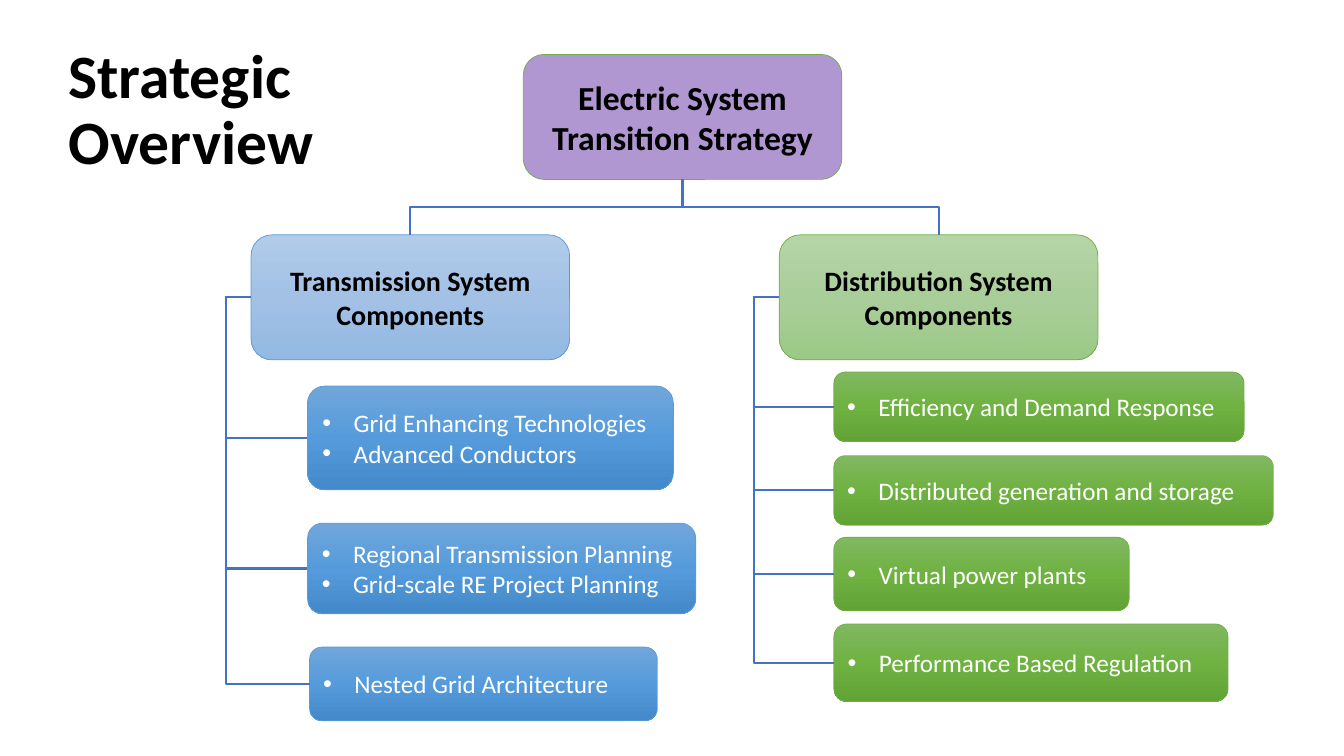
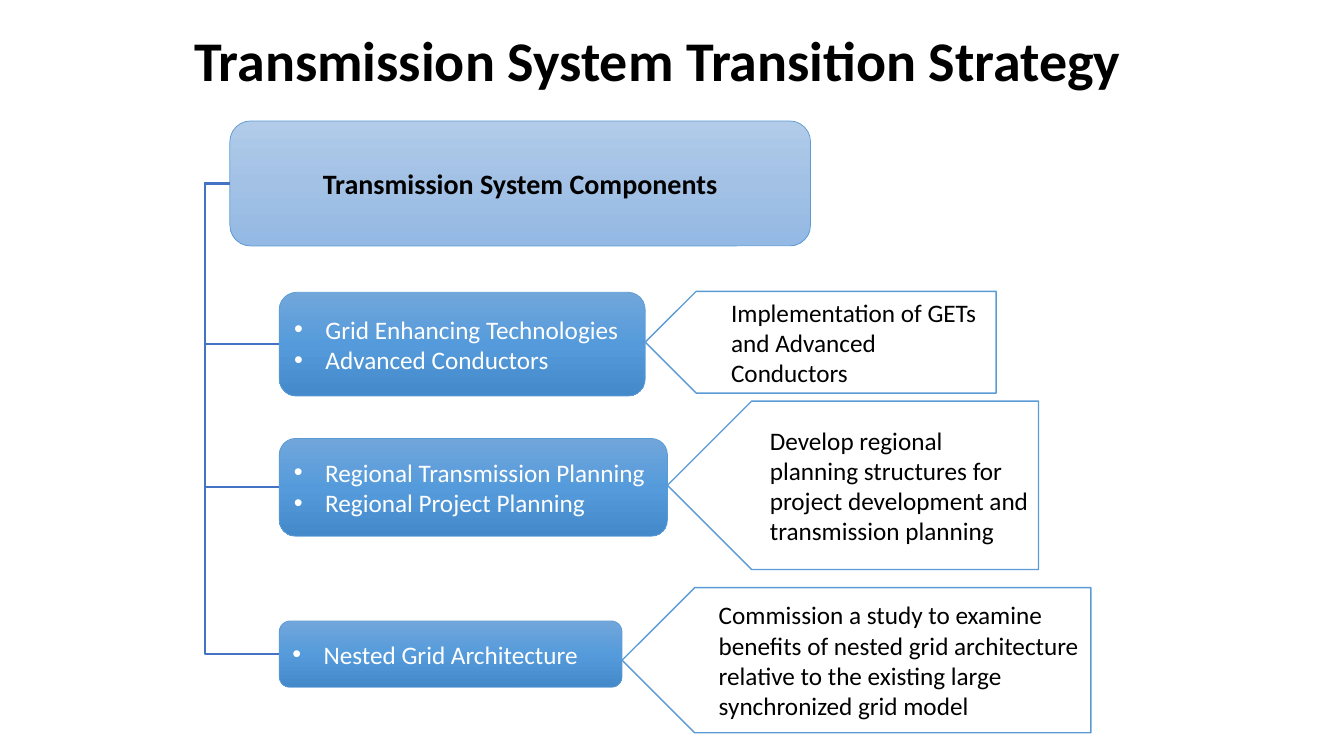
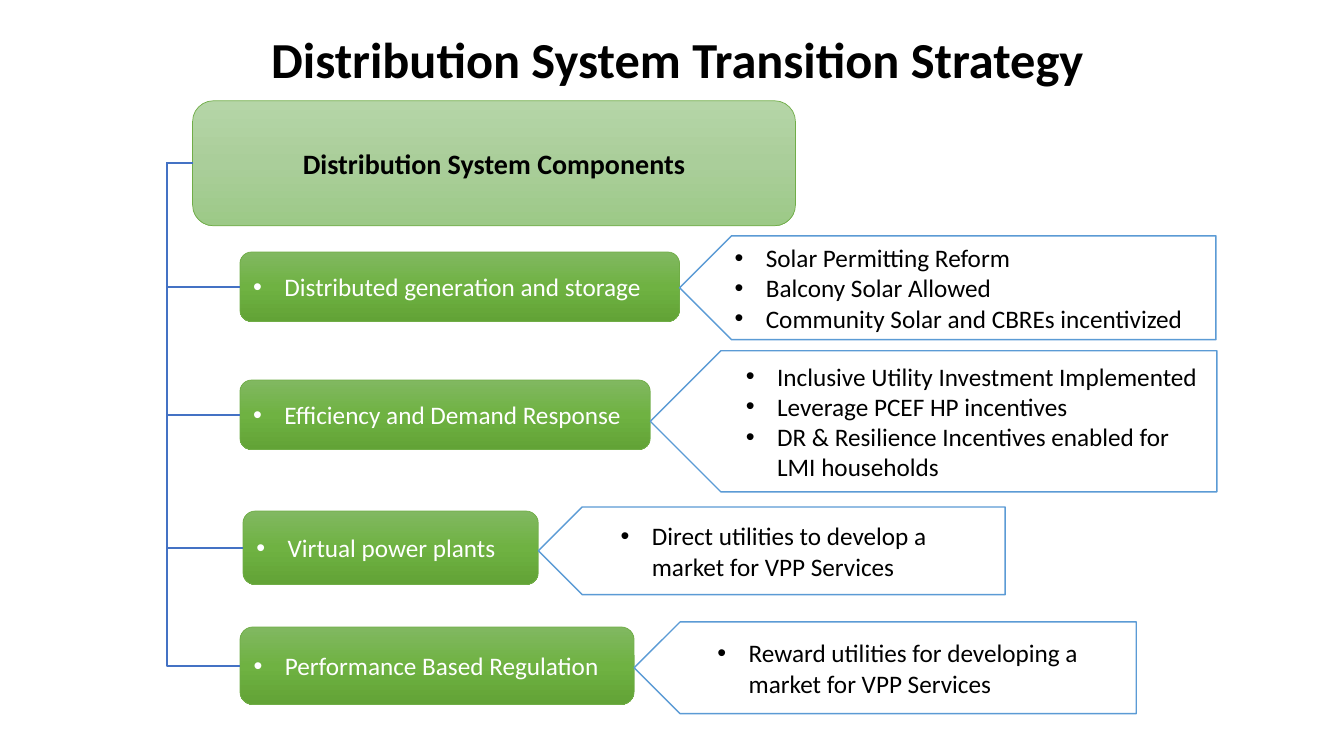
from copy import deepcopy

from lxml import etree
from pptx import Presentation
from pptx.dml.color import RGBColor
from pptx.enum import shapes, text
from pptx.oxml.ns import qn
from pptx.util import Inches, Pt

FONT = "Calibri"
BLACK = RGBColor(0, 0, 0)
WHITE = RGBColor(255, 255, 255)
LILAC = RGBColor(0xB1, 0x97, 0xD2)
BLUE = RGBColor(0x5B, 0x9B, 0xD5)
GREEN = RGBColor(0x70, 0xAD, 0x47)
WIRE = RGBColor(0x44, 0x72, 0xC4)


def shades(*codes):
    return [RGBColor.from_string(code) for code in codes]


# Each theme: outline, gradient of the heading, gradient of the items
SKY = (BLUE, shades("B1CBE9", "A3C1E5", "93B9E4"),
       shades("71A6DB", "559BDB", "448ACA"))
LEAF = (GREEN, shades("B5D5A7", "AACE9A", "9CC987"),
        shades("81B861", "6FB242", "62A336"))

GRID = ["Grid Enhancing Technologies", "Advanced Conductors"]
NEST = ["Nested Grid Architecture"]
REGION = "Regional Transmission Planning"

# Text, width and height of the distribution items
SAVE = (["Efficiency and Demand Response"], 4.07, 0.69)
STORE = (["Distributed generation and storage"], 4.36, 0.69)
PLANT = (["Virtual power plants"], 2.93, 0.73)
RULE = (["Performance Based Regulation"], 3.91, 0.77)


def style(run, size, color, bold=False):
    run.font.name = FONT
    run.font.size = Pt(size)
    run.font.color.rgb = color
    run.font.bold = bold


def indent(para, left, bullet):
    props = para._p.get_or_add_pPr()
    props.set("marL", str(Inches(left)))
    props.set("indent", str(Inches(-0.31 if bullet else 0)))
    if bullet:
        etree.SubElement(props, qn("a:buFont")).set("typeface", "Arial")
        etree.SubElement(props, qn("a:buChar")).set("char", "•")


def write(shape, lines, size, color, left=None, bullet=False, bold=False):
    """Fill a shape with centred lines, or with indented ones if left is set."""
    frame = shape.text_frame
    frame.word_wrap = True
    frame.vertical_anchor = text.MSO_ANCHOR.MIDDLE
    for num, line in enumerate(lines):
        para = frame.add_paragraph() if num else frame.paragraphs[0]
        if left is None:
            para.alignment = text.PP_ALIGN.CENTER
        else:
            indent(para, left, bullet)
            para.alignment = text.PP_ALIGN.LEFT
        run = para.add_run()
        run.text = line
        style(run, size, color, bold)


def blend(shape, colors):
    """Fill a shape with a three-stop gradient running downwards."""
    shape.fill.gradient()
    shape.fill.gradient_angle = 270
    stops = shape._element.spPr.find(qn("a:gradFill")).find(qn("a:gsLst"))
    stops.append(deepcopy(stops[-1]))
    for num, stop in enumerate(shape.fill.gradient_stops):
        stop.position = num / 2
        stop.color.rgb = colors[num]


def outline(slide, kind, left, top, width, height, color, weight):
    shape = slide.shapes.add_shape(kind, left, top, width, height)
    shape.shadow.inherit = False
    shape.line.color.rgb = color
    shape.line.width = Pt(weight)
    return shape


def card(slide, left, top, width, height, color):
    return outline(slide, shapes.MSO_SHAPE.ROUNDED_RECTANGLE, Inches(left),
                   Inches(top), Inches(width), Inches(height), color, 0.5)


def head(slide, theme, line, left, top, width):
    shape = card(slide, left, top, width, 1.24, theme[0])
    blend(shape, theme[1])
    write(shape, [line], 20, BLACK, bold=True)
    return shape


def item(slide, theme, parent, lines, width, height, left, top):
    """Draw a bulleted card and tie it to its heading."""
    shape = card(slide, left, top, width, height, theme[0])
    blend(shape, theme[2])
    write(shape, lines, 18, WHITE, left=0.31, bullet=True)
    hook(slide, parent, shape)
    return shape


def plate(slide, source, lines, top, width, height, left=0.81, bullet=True):
    """Draw a note whose tip touches the right side of its source."""
    shape = outline(slide, shapes.MSO_SHAPE.PENTAGON,
                    source.left + source.width, Inches(top),
                    Inches(width), Inches(height), BLUE, 1)
    shape._element.spPr.find(qn("a:xfrm")).set("flipH", "1")
    shape.fill.solid()
    shape.fill.fore_color.rgb = WHITE
    write(shape, lines, 18, BLACK, left=left, bullet=bullet)


def bend(slide, start, end, sites):
    """Join two shapes at their numbered sites (0 top, 1 left, 2 bottom)."""
    wire = slide.shapes.add_connector(shapes.MSO_CONNECTOR.ELBOW, 0, 0, 0, 0)
    wire.begin_connect(start, sites[0])
    wire.end_connect(end, sites[1])
    wire.line.color.rgb = WIRE
    wire.line.width = Pt(1.5)
    etree.SubElement(wire._element.spPr, qn("a:effectLst"))
    return wire


def hook(slide, parent, child):
    """Tie left sides, with the bend a quarter inch outside the parent."""
    wire = bend(slide, parent, child, (1, 1))
    ratio = round(-Inches(0.25) / wire.width * 100000)
    geom = wire._element.spPr.find(qn("a:prstGeom"))
    guide = etree.SubElement(geom.find(qn("a:avLst")), qn("a:gd"))
    guide.set("name", "adj1")
    guide.set("fmla", f"val {ratio}")


def drop(slide, parent, child):
    """Tie a bottom to a top; the elbow is turned to leave downwards."""
    wire = bend(slide, parent, child, (2, 0))
    right = wire.end_x > wire.begin_x
    mid_x = wire.left + wire.width // 2
    mid_y = wire.top + wire.height // 2
    wide, tall = wire.height, wire.width
    wire.left, wire.top = mid_x - wide // 2, mid_y - tall // 2
    wire.width, wire.height = wide, tall
    frame = wire._element.spPr.find(qn("a:xfrm"))
    frame.set("rot", str((270 if right else 90) * 60000))
    frame.set("flipH", "1" if right else "0")
    frame.set("flipV", "0")


def page(deck, title, size, left, top, width, height,
         align=text.PP_ALIGN.CENTER):
    slide = deck.slides.add_slide(deck.slide_layouts[5])
    shape = slide.shapes.title
    shape.left, shape.top = Inches(left), Inches(top)
    shape.width, shape.height = Inches(width), Inches(height)
    frame = shape.text_frame
    frame.word_wrap = True
    frame.auto_size = text.MSO_AUTO_SIZE.NONE
    frame.vertical_anchor = text.MSO_ANCHOR.MIDDLE
    para = frame.paragraphs[0]
    para.alignment = align
    para.line_spacing = 0.9
    run = para.add_run()
    run.text = title
    style(run, size, BLACK, bold=True)
    return slide


def survey(deck):
    slide = page(deck, "Strategic Overview", 44, 0.58, 0.2, 3.03, 1.81,
                 text.PP_ALIGN.LEFT)
    root = card(slide, 5.19, 0.54, 3.16, 1.24, GREEN)
    root.fill.solid()
    root.fill.fore_color.rgb = LILAC
    write(root, ["Electric System Transition Strategy"], 24, BLACK, bold=True)

    trans = head(slide, SKY, "Transmission System Components",
                 2.49, 2.33, 3.16)
    dist = head(slide, LEAF, "Distribution System Components",
                7.73, 2.33, 3.16)
    for child in (trans, dist):
        drop(slide, root, child)

    plans = [REGION, "Grid-scale RE Project Planning"]
    item(slide, SKY, trans, GRID, 3.63, 1.03, 3.05, 3.83)
    item(slide, SKY, trans, plans, 3.85, 0.9, 3.05, 5.19)
    item(slide, SKY, trans, NEST, 3.45, 0.73, 3.07, 6.42)
    for part, top in ((SAVE, 3.69), (STORE, 4.52), (PLANT, 5.33),
                      (RULE, 6.19)):
        item(slide, LEAF, dist, *part, 8.27, top)


def trunk(deck):
    slide = page(deck, "Transmission System Transition Strategy", 40,
                 0.92, 0.24, 11.2, 0.77)
    top_box = head(slide, SKY, "Transmission System Components",
                   2.28, 1.2, 5.76)
    rows = [
        (GRID, 3.63, 1.03, 2.9,
         "Implementation of GETs and Advanced Conductors", 2.89, 3.48, 1.01),
        ([REGION, "Regional Project Planning"], 3.85, 0.97, 4.35,
         "Develop regional planning structures for project development "
         "and transmission planning", 3.98, 3.68, 1.67),
        (NEST, 3.4, 0.66, 6.16,
         "Commission a study to examine benefits of nested grid architecture "
         "relative to the existing large synchronized grid model",
         5.83, 4.65, 1.44),
    ]
    for lines, width, height, top, note, *place in rows:
        shape = item(slide, SKY, top_box, lines, width, height, 2.77, top)
        plate(slide, shape, [note], *place, left=0.5, bullet=False)


def local(deck):
    slide = page(deck, "Distribution System Transition Strategy", 36,
                 1.12, 0.23, 11.2, 0.77)
    top_box = head(slide, LEAF, "Distribution System Components",
                   1.91, 1, 5.98)
    rows = [
        (STORE, 2.38, 2.5,
         ["Solar Permitting Reform", "Balcony Solar Allowed",
          "Community Solar and CBREs incentivized"], 2.34, 5.32, 1.03, 0.5),
        (SAVE, 2.38, 3.77,
         ["Inclusive Utility Investment Implemented",
          "Leverage PCEF HP incentives",
          "DR & Resilience Incentives enabled for LMI households"],
         3.48, 5.62, 1.4, 0.81),
        (PLANT, 2.41, 5.07,
         ["Direct utilities to develop a market for VPP Services"],
         5.03, 4.63, 0.87, 0.81),
        (RULE, 2.38, 6.22,
         ["Reward utilities for developing a market for VPP Services"],
         6.17, 4.98, 0.91, 0.81),
    ]
    for part, left, top, notes, *place in rows:
        shape = item(slide, LEAF, top_box, *part, left, top)
        plate(slide, shape, notes, *place)


def main():
    deck = Presentation()
    deck.slide_width, deck.slide_height = Inches(13.33), Inches(7.5)
    survey(deck)
    trunk(deck)
    local(deck)
    deck.save("out.pptx")


if __name__ == "__main__":
    main()
